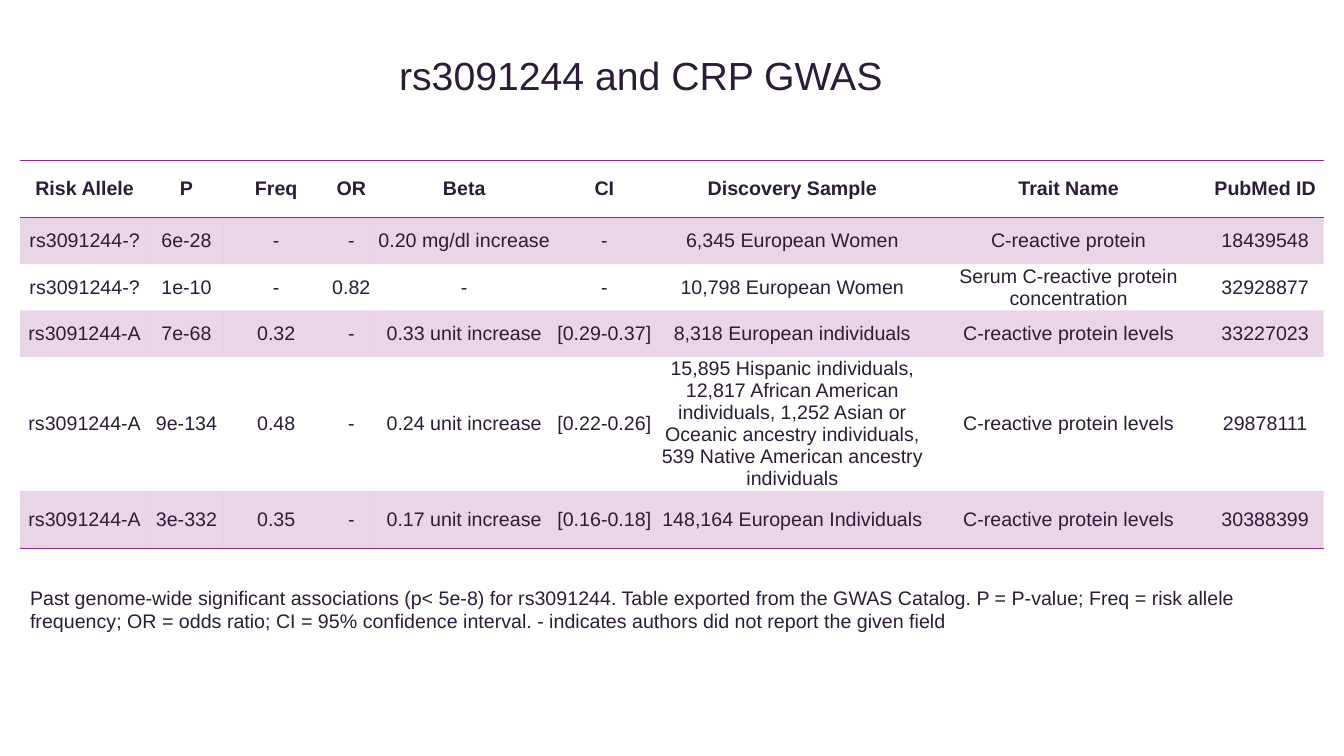
from lxml import etree
from pptx import Presentation
from pptx.dml.color import RGBColor
from pptx.enum.text import MSO_ANCHOR, PP_ALIGN
from pptx.oxml.ns import qn
from pptx.util import Inches, Pt

INK = RGBColor(0x2B, 0x1D, 0x37)
PLUM = RGBColor(0x96, 0x2A, 0x8B)
PLAIN_TABLE_STYLE = "{2D5ABB26-0587-4C30-8999-92F81FD0307C}"

COLUMN_WIDTHS = [1.28, 0.74, 1.04, 0.45, 1.79, 0.99, 2.74, 2.74, 1.16]
ROW_HEIGHTS = [0.57, 0.46, 0.46, 0.46, 0.57, 0.57]
ASSOCIATIONS = [
    ["Risk Allele", "P", "Freq", "OR", "Beta", "CI", "Discovery Sample",
     "Trait Name", "PubMed ID"],
    ["rs3091244-?", "6e-28", "-", "-", "0.20 mg/dl increase", "-",
     "6,345 European Women", "C-reactive protein", "18439548"],
    ["rs3091244-?", "1e-10", "-", "0.82", "-", "-",
     "10,798 European Women", "Serum C-reactive protein concentration", "32928877"],
    ["rs3091244-A", "7e-68", "0.32", "-", "0.33 unit increase", "[0.29-0.37]",
     "8,318 European individuals", "C-reactive protein levels", "33227023"],
    ["rs3091244-A", "9e-134", "0.48", "-", "0.24 unit increase", "[0.22-0.26]",
     "15,895 Hispanic individuals, 12,817 African American individuals, "
     "1,252 Asian or Oceanic ancestry individuals, "
     "539 Native American ancestry individuals",
     "C-reactive protein levels", "29878111"],
    ["rs3091244-A", "3e-332", "0.35", "-", "0.17 unit increase", "[0.16-0.18]",
     "148,164 European Individuals", "C-reactive protein levels", "30388399"],
]


def write_text(text_frame, text, size=14, bold=False, align=PP_ALIGN.LEFT, spacing=None):
    text_frame.word_wrap = True
    paragraph = text_frame.paragraphs[0]
    paragraph.alignment = align
    paragraph.line_spacing = spacing
    run = paragraph.add_run()
    run.text = text
    run.font.name = "Arial"
    run.font.size = Pt(size)
    run.font.bold = bold
    run.font.color.rgb = INK


def add_borders(cell, sides):
    """Draw plum lines on the given sides, named by their XML tags in schema order."""
    properties = cell._tc.get_or_add_tcPr()
    for position, side in enumerate(sides):
        line = etree.Element(qn(f"a:{side}"), w=str(Pt(1)))
        fill = etree.SubElement(line, qn("a:solidFill"))
        etree.SubElement(fill, qn("a:srgbClr"), val=str(PLUM))
        properties.insert(position, line)


presentation = Presentation()
presentation.slide_width = Inches(13.33)
presentation.slide_height = Inches(7.5)
slide = presentation.slides.add_slide(presentation.slide_layouts[6])

# Table of associations
table_frame = slide.shapes.add_table(
    len(ROW_HEIGHTS), len(COLUMN_WIDTHS),
    Inches(0.2), Inches(1.59), Inches(12.94), Inches(sum(ROW_HEIGHTS)))
table = table_frame.table
table._tbl.tblPr.find(qn("a:tableStyleId")).text = PLAIN_TABLE_STYLE
for column, width in zip(table.columns, COLUMN_WIDTHS):
    column.width = Inches(width)
for row, height in zip(table.rows, ROW_HEIGHTS):
    row.height = Inches(height)

last_row = len(ASSOCIATIONS) - 1
row_borders = {0: ["lnT", "lnB"], last_row: ["lnB"]}
for row_index, values in enumerate(ASSOCIATIONS):
    for column_index, value in enumerate(values):
        cell = table.cell(row_index, column_index)
        cell.vertical_anchor = MSO_ANCHOR.MIDDLE
        cell.margin_left = cell.margin_right = Inches(0.01)
        cell.margin_top = cell.margin_bottom = Inches(0.01)
        write_text(cell.text_frame, value, bold=row_index == 0, align=PP_ALIGN.CENTER)
        if row_index % 2:
            cell.fill.solid()
            cell.fill.fore_color.rgb = PLUM
            color = cell._tc.tcPr.find(".//" + qn("a:srgbClr"))
            etree.SubElement(color, qn("a:alpha"), val="20000")
        else:
            cell.fill.background()
        add_borders(cell, row_borders.get(row_index, []))

# Table note
note = slide.shapes.add_textbox(Inches(0.2), Inches(5.76), Inches(12.94), Inches(0.57))
write_text(
    note.text_frame,
    "Past genome-wide significant associations (p< 5e-8) for rs3091244. "
    "Table exported from the GWAS Catalog. P = P-value; Freq = risk allele frequency; "
    "OR = odds ratio; CI = 95% confidence interval. "
    "- indicates authors did not report the given field")

# Title
title = slide.shapes.add_textbox(Inches(1.87), Inches(0.38), Inches(8.97), Inches(0.6))
title_frame = title.text_frame
title_frame.vertical_anchor = MSO_ANCHOR.BOTTOM
title_frame.margin_left = title_frame.margin_right = 0
title_frame.margin_top = title_frame.margin_bottom = 0
write_text(title_frame, "rs3091244 and CRP GWAS", size=28,
           align=PP_ALIGN.CENTER, spacing=0.9)

presentation.save("out.pptx")
